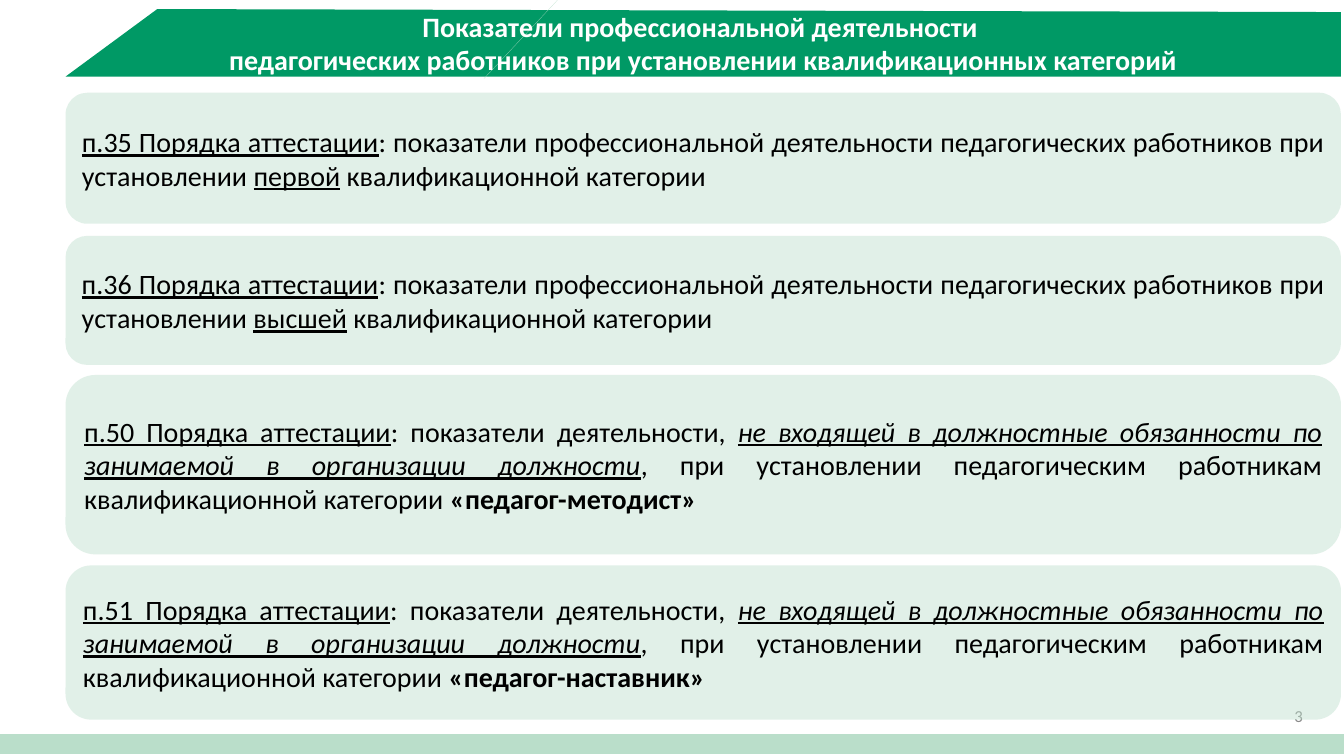
from lxml.etree import SubElement
from pptx import Presentation
from pptx.dml.color import RGBColor
from pptx.enum.shapes import MSO_CONNECTOR as Connector, MSO_SHAPE as Shape
from pptx.enum.text import MSO_ANCHOR as Anchor, PP_ALIGN as Align
from pptx.oxml.ns import qn
from pptx.util import Inches, Pt

GREEN = RGBColor(0x00, 0x99, 0x65)
MINT = RGBColor(0xBA, 0xDE, 0xCA)
WHITE = RGBColor(0xFF, 0xFF, 0xFF)
BLACK = RGBColor(0x00, 0x00, 0x00)
GREY = RGBColor(0x89, 0x89, 0x89)

SLIDE_W, SLIDE_H = 13.33, 7.5
LEFT, WIDTH = 0.65, 12.65

# Run styles
PLAIN, UNDER, BOLD = {}, {"underline": True}, {"bold": True}
UNDER_ITALIC = {"underline": True, "italic": True}

TITLE = ["Показатели профессиональной деятельности ",
         "педагогических работников при установлении квалификационных категорий"]


def category_runs(clause, category):
    return [(f"п.{clause} Порядка аттестации", UNDER),
            (": показатели профессиональной деятельности педагогических "
             "работников при установлении ", PLAIN),
            (category, UNDER),
            (" квалификационной категории", PLAIN)]


def role_runs(clause, role):
    return [(f"п.{clause} Порядка аттестации", UNDER),
            (": показатели деятельности, ", PLAIN),
            ("не входящей в должностные обязанности по занимаемой "
             "в организации должности", UNDER_ITALIC),
            (", при установлении педагогическим работникам "
             "квалификационной категории ", PLAIN),
            (f"«{role}»", BOLD)]


# Top, height and text of each card
CARDS = [(0.92, 1.3, category_runs(35, "первой")),
         (2.34, 1.28, category_runs(36, "высшей")),
         (3.72, 1.78, role_runs(50, "педагог-методист")),
         (5.61, 1.53, role_runs(51, "педагог-наставник"))]


def paint(shape, color):
    shape.fill.solid()
    shape.fill.fore_color.rgb = color
    shape.line.fill.background()
    shape.shadow.inherit = False


def write(frame, paragraphs, align, color, size=20):
    frame.word_wrap = True
    frame.vertical_anchor = Anchor.MIDDLE
    for index, runs in enumerate(paragraphs):
        paragraph = frame.add_paragraph() if index else frame.paragraphs[0]
        paragraph.alignment = align
        paragraph.line_spacing = 1.0
        paragraph.space_before = Pt(0)
        for text, style in runs:
            run = paragraph.add_run()
            run.text = text
            font = run.font
            font.name, font.size, font.color.rgb = "Calibri", Pt(size), color
            for attribute, value in style.items():
                setattr(font, attribute, value)


def add_header(slide, left, top, width, height):
    # Banner with a slanted left end
    slant, drop = 0.91, 0.03
    outline = slide.shapes.build_freeform(
        Inches(left + slant), Inches(top), scale=1.0)
    corners = [(left + width, top + drop), (left + width, top + height),
               (left, top + height)]
    outline.add_line_segments([(Inches(x), Inches(y)) for x, y in corners])
    paint(outline.convert_to_shape(), GREEN)

    # Fine diagonal across the banner
    diagonal = slide.shapes.add_connector(
        Connector.STRAIGHT, Inches(5.53), 0, Inches(4.8), Inches(0.78))
    diagonal.line.color.rgb = MINT
    diagonal.line.width = Pt(0.1)
    SubElement(diagonal._element.spPr, qn("a:effectLst"))

    # Title in front of the banner
    title = slide.shapes.title
    title.left, title.top = Inches(left), Inches(top)
    title.width, title.height = Inches(width), Inches(height)
    write(title.text_frame, [[(line, BOLD)] for line in TITLE],
          Align.CENTER, WHITE)
    slide.shapes._spTree.append(title._element)


def add_footer(slide, top, height):
    bar = slide.shapes.add_shape(Shape.FLOWCHART_PROCESS, 0, Inches(top),
                                 Inches(SLIDE_W), Inches(height))
    paint(bar, MINT)
    number = slide.shapes.add_textbox(Inches(10.02), Inches(top - 0.38),
                                      Inches(3), Inches(0.4))
    write(number.text_frame, [[("3", PLAIN)]], Align.RIGHT, GREY, size=12)


def add_card(slide, left, top, width, height, runs):
    card = slide.shapes.add_shape(Shape.ROUNDED_RECTANGLE, Inches(left),
                                  Inches(top), Inches(width), Inches(height))
    paint(card, MINT)
    color = card.fill._xPr.find(qn("a:solidFill"))[0]
    SubElement(color, qn("a:alpha")).set("val", "43000")
    write(card.text_frame, [runs], Align.JUSTIFY, BLACK)


def main():
    prs = Presentation()
    prs.slide_width, prs.slide_height = Inches(SLIDE_W), Inches(SLIDE_H)
    slide = prs.slides.add_slide(prs.slide_layouts.get_by_name("Title Only"))
    add_header(slide, LEFT, 0.09, WIDTH, 0.67)
    add_footer(slide, 7.28, 0.2)
    for top, height, runs in CARDS:
        add_card(slide, LEFT, top, WIDTH, height, runs)
    prs.save("out.pptx")


if __name__ == "__main__":
    main()
